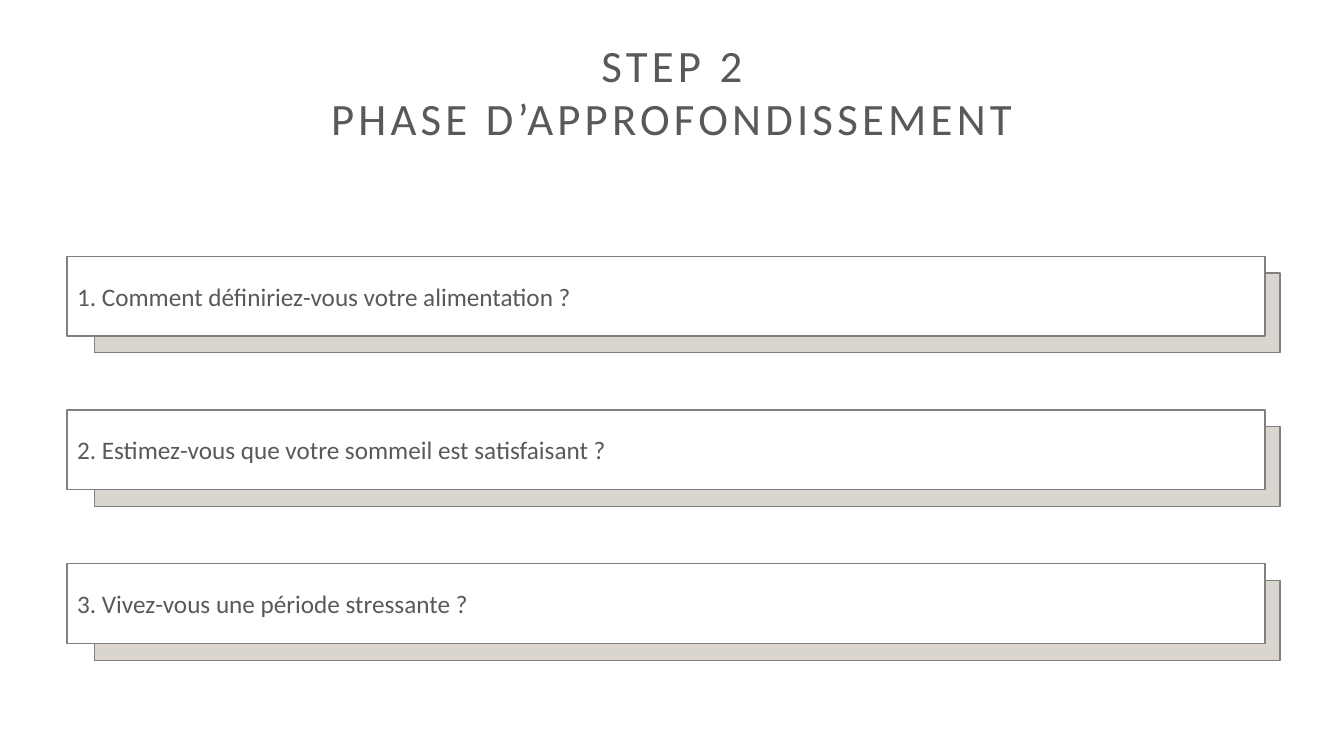
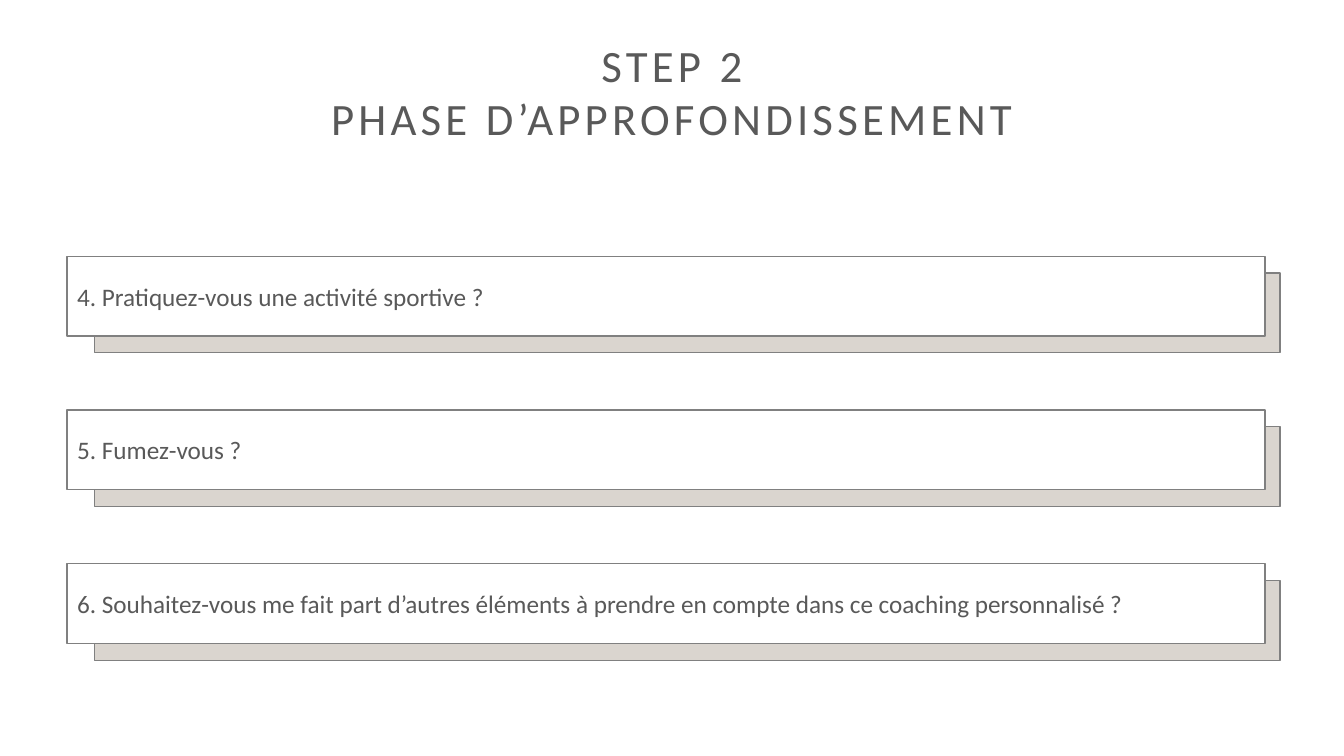
from pptx import Presentation
from pptx.dml.color import RGBColor
from pptx.enum import shapes, text
from pptx.util import Pt

# Shared style
FONT = "Calibri"
TEXT_GREY = RGBColor(0x59, 0x59, 0x59)
LINE_GREY = RGBColor(0x80, 0x80, 0x80)
BEIGE = RGBColor(0xDA, 0xD5, 0xCF)
WHITE = RGBColor(0xFF, 0xFF, 0xFF)

# Shared layout, in points: left, top, width, height
SLIDE_SIZE = (960, 540)
TITLE_BOX = (0, 23, 960, 124)
QUESTION_BOX = (48, 183, 866.4, 69)
QUESTION_PITCH = 109.8
CARD_HEIGHT = 57
BACK_INDENT = 19.6
FRONT_INSET = 10.8

TITLE = ["STEP 2", "PHASE D’APPROFONDISSEMENT"]
QUESTIONS = [
    [
        "1. Comment définiriez-vous votre alimentation ?",
        "2. Estimez-vous que votre sommeil est satisfaisant ?",
        "3. Vivez-vous une période stressante ?",
    ],
    [
        "4. Pratiquez-vous une activité sportive ?",
        "5. Fumez-vous ?",
        "6. Souhaitez-vous me fait part d’autres éléments à prendre en compte "
        "dans ce coaching personnalisé ?",
    ],
]


def write_text(frame, lines, size, align=text.PP_ALIGN.LEFT,
               anchor=text.MSO_ANCHOR.MIDDLE, spacing=0):
    """Fill a text frame, one paragraph a line; spacing is in points."""
    frame.word_wrap = True
    frame.auto_size = text.MSO_AUTO_SIZE.NONE
    frame.vertical_anchor = anchor
    for index, line in enumerate(lines):
        paragraph = frame.add_paragraph() if index else frame.paragraphs[0]
        paragraph.alignment = align
        run = paragraph.add_run()
        run.text = line
        run.font.name = FONT
        run.font.size = Pt(size)
        run.font.color.rgb = TEXT_GREY
        if spacing:
            run.font._element.set("spc", str(spacing * 100))


def add_title(slide, box):
    title = slide.shapes.title
    title.left, title.top, title.width, title.height = map(Pt, box)
    write_text(title.text_frame, TITLE, 32, align=text.PP_ALIGN.CENTER,
               anchor=text.MSO_ANCHOR.TOP, spacing=3)


def add_panel(group, box, fill):
    panel = group.shapes.add_shape(
        shapes.MSO_SHAPE.FLOWCHART_PROCESS, *map(Pt, box))
    panel.shadow.inherit = False
    panel.fill.solid()
    panel.fill.fore_color.rgb = fill
    panel.line.color.rgb = LINE_GREY
    panel.line.width = Pt(1)
    return panel


def add_question(slide, question, box):
    """A white card in front of a beige one, filling the box together."""
    left, top, width, height = box
    group = slide.shapes.add_group_shape()
    add_panel(group, (left + BACK_INDENT, top + height - CARD_HEIGHT,
                      width - BACK_INDENT, CARD_HEIGHT), BEIGE)
    card = add_panel(group, (left, top, width - FRONT_INSET, CARD_HEIGHT), WHITE)
    write_text(card.text_frame, [question], 18)


def add_question_slide(presentation, questions):
    slide = presentation.slides.add_slide(presentation.slide_layouts[5])
    add_title(slide, TITLE_BOX)
    left, top, width, height = QUESTION_BOX
    for row, question in enumerate(questions):
        add_question(slide, question,
                     (left, top + row * QUESTION_PITCH, width, height))


def main():
    presentation = Presentation()
    presentation.slide_width, presentation.slide_height = map(Pt, SLIDE_SIZE)
    for questions in QUESTIONS:
        add_question_slide(presentation, questions)
    presentation.save("out.pptx")


if __name__ == "__main__":
    main()
